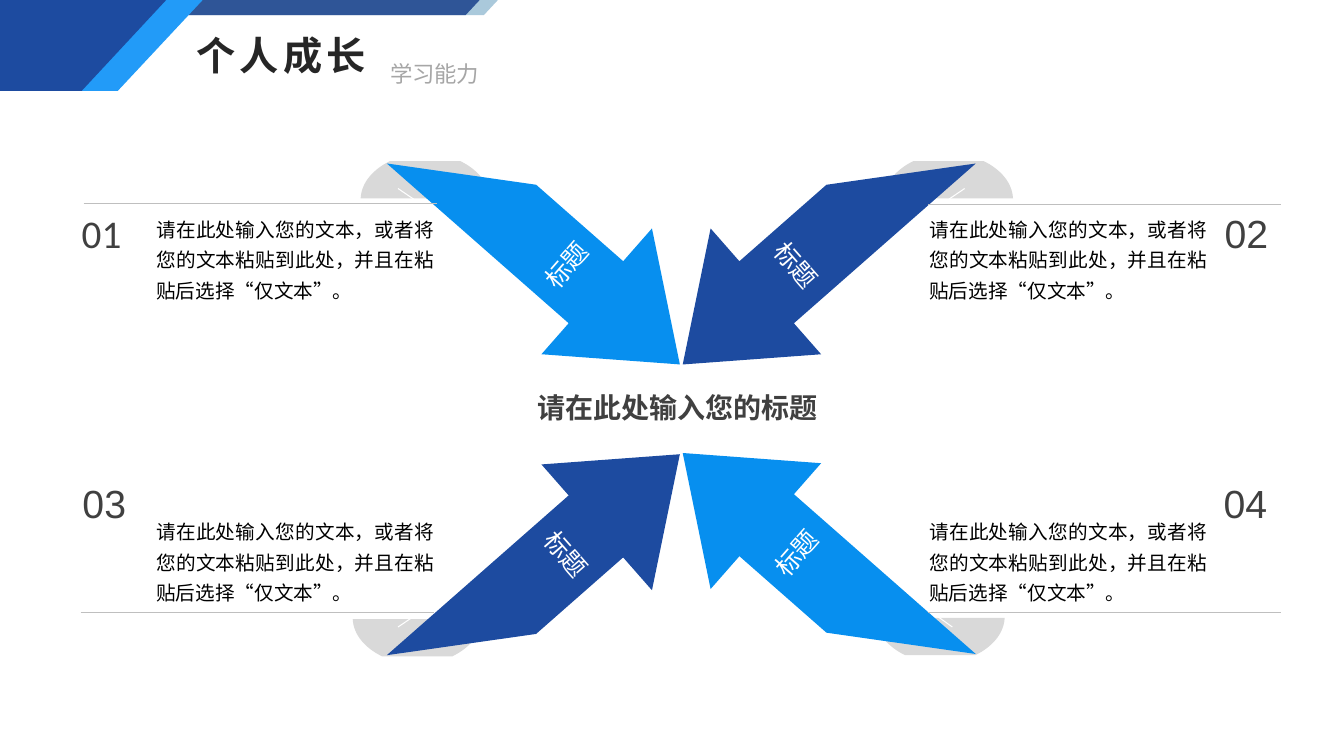
from dataclasses import dataclass

from lxml.etree import SubElement as Sub
from pptx import Presentation
from pptx.dml.color import RGBColor as Rgb
from pptx.enum.shapes import MSO_CONNECTOR as Link, MSO_SHAPE as Form
from pptx.enum.text import MSO_ANCHOR as Anchor, MSO_AUTO_SIZE as Fit, PP_ALIGN as Align
from pptx.oxml.ns import qn
from pptx.util import Cm, Pt


@dataclass(frozen=True)
class Theme:
    """Colours, fonts and type sizes of the slide."""
    navy: str = "1D4BA0"
    blue: str = "078FEF"
    sky: str = "229BF8"
    steel: str = "2F5597"
    teal: str = "1A6D9F"
    white: str = "FFFFFF"
    black: str = "000000"
    ink: str = "262626"
    dark: str = "404040"
    mute: str = "A6A6A6"
    rule: str = "BFBFBF"
    disc: str = "D9D9D9"
    han: str = "Noto Sans CJK SC"
    sans: str = "Arial"
    title: int = 28
    head: int = 20
    label: int = 18
    sub: int = 16
    body: int = 14


@dataclass(frozen=True)
class Corner:
    """One quarter of the diagram, lengths in centimetres."""
    num: str
    right: bool
    low: bool
    arrow: tuple
    disc: tuple
    spark: tuple
    digit: tuple
    rule: tuple
    font: str = "Arial"


T = Theme()
NOTE = "请在此处输入您的文本，或者将您的文本粘贴到此处，并且在粘贴后选择“仅文本”。"
ARROW = (8.89, 4.22)
DISC = (3.25, 0.94)
BARB = ((0, 2.11), (2.79, 0), (2.79, 1.04), (8.89, 1.04),
        (5.71, 3.12), (2.79, 3.12), (2.79, 4.22))
CURVE = ((2.51, 0), (2.92, 0.2), (3.23, 0.53), (3.25, 0.94))
CORNERS = (
    Corner("01", False, False, (9.35, 4.14), (9.09, 4.06),
           (10.03, 4.75, 15.37, 8.38), (2.06, 5.28), (2.11, 5.13), "Calibri"),
    Corner("02", True, False, (16.1, 4.14), (22.28, 4.06),
           (24.31, 4.75, 18.97, 8.38), (30.86, 5.28), (23.39, 5.16)),
    Corner("03", False, True, (9.35, 12.27), (8.89, 15.6),
           (10.03, 15.8, 15.37, 12.19), (2.08, 12.09), (2.03, 15.44)),
    Corner("04", True, True, (16.1, 12.24), (22.07, 15.57),
           (24, 15.8, 18.97, 12.19), (30.84, 12.09), (23.39, 15.44)),
)


def paint(shape, tint):
    """Give a shape a flat fill without line or shadow."""
    shape.shadow.inherit = False
    shape.fill.solid()
    shape.fill.fore_color.rgb = Rgb.from_string(tint)
    shape.line.fill.background()
    return shape


def trace(slide, points, tint):
    """Draw a closed outline through points in centimetres."""
    spots = [(Cm(x), Cm(y)) for x, y in points]
    pen = slide.shapes.build_freeform(*spots[0])
    pen.add_line_segments(spots[1:], close=True)
    return paint(pen.convert_to_shape(), tint)


def place(points, spot, size, flip_x, flip_y):
    """Mirror points inside a box and move them to a spot."""
    return [(spot[0] + (size[0] - x if flip_x else x),
             spot[1] + (size[1] - y if flip_y else y)) for x, y in points]


def bend(ends, steps=16):
    """Return points along a cubic curve."""
    (ax, ay), (bx, by), (cx, cy), (dx, dy) = ends
    spots = []
    for i in range(steps + 1):
        t = i / steps
        a, b, c, d = (1 - t) ** 3, 3 * t * (1 - t) ** 2, 3 * t * t * (1 - t), t ** 3
        spots.append((a * ax + b * bx + c * cx + d * dx,
                      a * ay + b * by + c * cy + d * dy))
    return spots


def line(slide, ends, tint, width):
    """Draw a straight line."""
    rule = slide.shapes.add_connector(Link.STRAIGHT, *map(Cm, ends))
    rule.line.color.rgb = Rgb.from_string(tint)
    rule.line.width = Pt(width)
    Sub(rule._element.spPr, qn("a:effectLst"))


def write(frame, text, size, tint, font=T.han, bold=False, align=Align.LEFT, lead=None):
    """Add one styled run to the first paragraph."""
    para = frame.paragraphs[0]
    para.alignment = align
    if lead:
        para.line_spacing = lead
    run = para.add_run()
    run.text = text
    run.font.size, run.font.bold, run.font.name = Pt(size), bold, font
    run.font.color.rgb = Rgb.from_string(tint)
    Sub(run._r.get_or_add_rPr(), qn("a:ea"), typeface=font)
    return run


def inset(frame, left=0, top=0, right=0, bottom=0):
    """Set the four margins of a text frame."""
    frame.margin_left, frame.margin_top = Cm(left), Cm(top)
    frame.margin_right, frame.margin_bottom = Cm(right), Cm(bottom)


def box(slide, area, wrap=True):
    """Add a text box and return its frame."""
    frame = slide.shapes.add_textbox(*map(Cm, area)).text_frame
    frame.word_wrap = wrap
    return frame


def banner(slide):
    """Draw the bands at the top left."""
    for left, tint, alpha in ((3, T.teal, 37), (2.54, T.steel, None)):
        band = slide.shapes.add_shape(Form.PARALLELOGRAM, Cm(left), Cm(0), Cm(9.55), Cm(0.38))
        band.adjustments[0] = 0.93
        paint(band, tint)
        if alpha:
            hue = band._element.spPr.find(".//" + qn("a:srgbClr"))
            Sub(hue, qn("a:alpha"), val=str(alpha * 1000))
    for top, foot, tint in ((5.11, 2.97, T.sky), (4.19, 2.06, T.navy)):
        trace(slide, ((0, 0), (top, 0), (foot, 2.29), (0, 2.29)), tint)


def header(slide):
    """Fill the title and the line beside it."""
    title = slide.shapes.title
    title.left, title.top, title.width, title.height = map(Cm, (4.7, 0.66, 4.88, 1.45))
    frame = title.text_frame
    frame.word_wrap, frame.auto_size = False, Fit.NONE
    frame.vertical_anchor = Anchor.TOP
    run = write(frame, "个人成长", T.title, T.ink, bold=True)
    run._r.get_or_add_rPr().set("spc", "300")
    write(box(slide, (9.58, 1.4, 2.77, 0.94), False), "学习能力", T.sub, T.mute)


def arrow(slide, part):
    """Draw a turned arrow with its label."""
    same = part.right == part.low
    points = place(BARB, part.arrow, ARROW, not part.right, not part.low)
    shape = trace(slide, points, T.blue if same else T.navy)
    shape.rotation = 41.3 if same else 318.7
    frame = shape.text_frame
    frame.vertical_anchor = Anchor.MIDDLE
    tail = 1.27
    inset(frame, 0 if part.right else tail, 0.89, tail if part.right else 0, 0.89)
    frame._txBody.bodyPr.set("vert", "vert270" if same else "vert")
    write(frame, "标题", T.label, T.white, align=Align.CENTER)


def corner(slide, part):
    """Draw the disc, arrow, number, note and rule of a quarter."""
    arc = bend(CURVE)
    edge = arc + [(DISC[0] - x, y) for x, y in reversed(arc)]
    trace(slide, place(edge, part.disc, DISC, False, part.low), T.disc)
    line(slide, part.spark, T.white, 0.75)
    arrow(slide, part)
    top, tall = (11.99, 3.25) if part.low else (5.31, 3.56)
    note = box(slide, (23.42 if part.right else 3.94, top, 7.01, tall))
    note.vertical_anchor = Anchor.BOTTOM if part.low else Anchor.TOP
    inset(note)
    write(note, NOTE, T.body, T.black, align=Align.JUSTIFY, lead=1.3)
    digit = box(slide, (*part.digit, 1.57, 1.17))
    inset(digit)
    write(digit, part.num, T.title, T.dark, font=part.font)
    x, y = part.rule
    line(slide, (x, y, x + 8.9, y), T.rule, 0.5)


def main():
    """Build and save the slide."""
    deck = Presentation()
    deck.slide_width, deck.slide_height = Cm(33.87), Cm(19.05)
    slide = deck.slides.add_slide(deck.slide_layouts[5])
    banner(slide)
    header(slide)
    for part in CORNERS:
        corner(slide, part)
    write(box(slide, (11.71, 9.47, 10.74, 1.37)), "请在此处输入您的标题",
          T.head, T.dark, bold=True, align=Align.CENTER, lead=1.3)
    deck.save("out.pptx")


if __name__ == "__main__":
    main()
